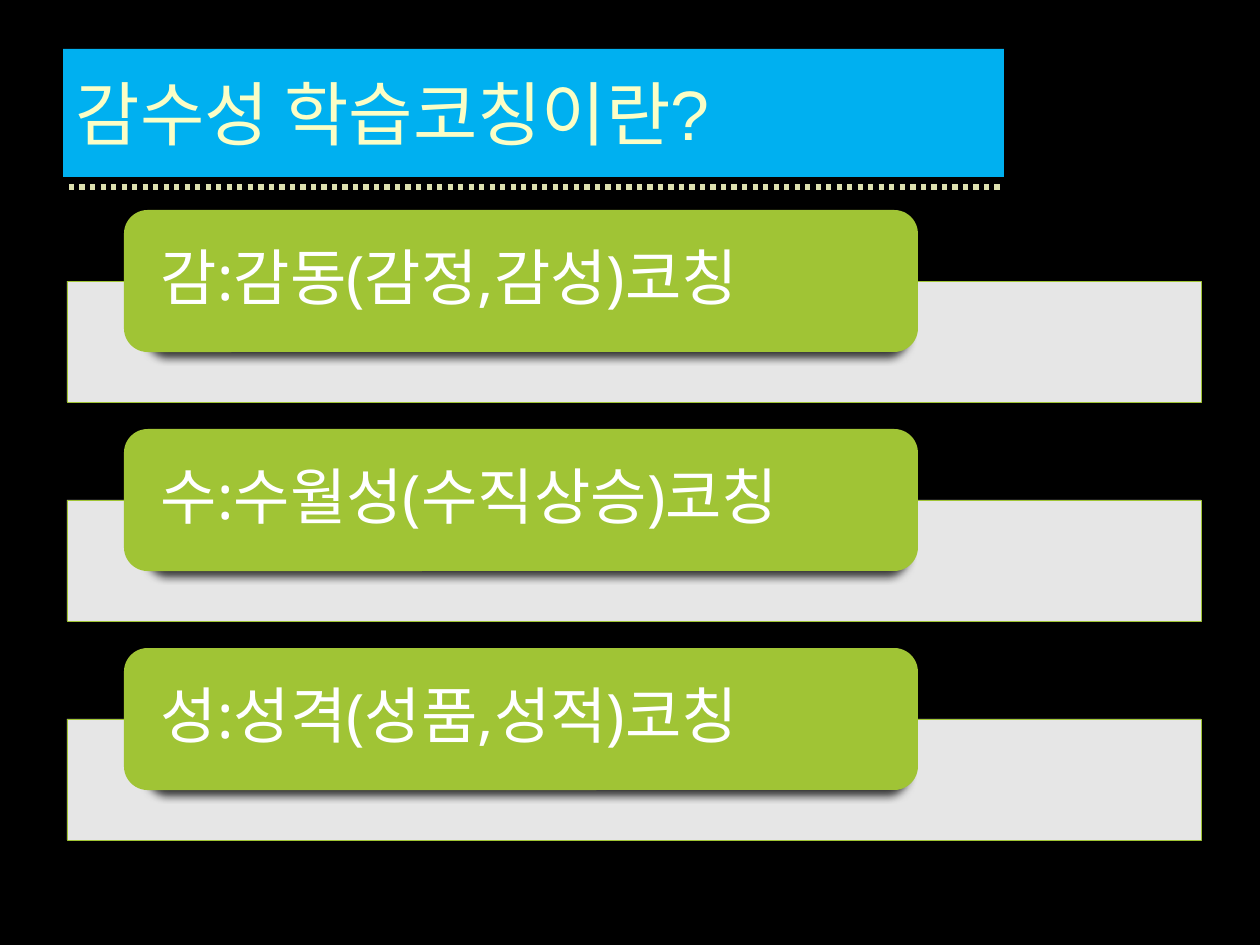
"""Builds a slide that explains sensitivity learning coaching in three rows."""
from dataclasses import dataclass

from lxml import etree
from pptx import Presentation, util as u
from pptx.dml.color import RGBColor
from pptx.enum import dml, shapes, text
from pptx.oxml import ns

TITLE = "감수성 학습코칭이란?"
ROWS = ["감:감동(감정,감성)코칭", "수:수월성(수직상승)코칭", "성:성격(성품,성적)코칭"]

SCALE = 914400 / 126
SLIDE_SIZE = (1260, 945)
TITLE_BOX = (63, 49, 941, 128)
RULE = (69, 187, 1004, 187)
BAR = (67, 281, 1134, 121)
LABEL = (124, 210, 794, 142)
ROW_PITCH = 219


@dataclass(frozen=True)
class Theme:
    background: str = "000000"
    title_fill: str = "00B0F0"
    title_text: str = "FBFEC6"
    rule: str = "DDE0AF"
    accent: str = "A0C435"
    white: str = "FFFFFF"
    shadow: str = "000000"
    title_font: str = "Arial"
    label_font: str = "Noto Sans"
    title_size: int = 40
    label_size: int = 35


THEME = Theme()


def px(value):
    return u.Emu(round(value * SCALE))


def child(parent, tag, **attributes):
    node = etree.SubElement(parent, ns.qn(tag))
    for name, value in attributes.items():
        node.set(name, str(value))
    return node


def add_box(page, kind, place, fill):
    box = page.shapes.add_shape(kind, *map(px, place))
    box.shadow.inherit = False
    box.fill.solid()
    box.fill.fore_color.rgb = RGBColor.from_string(fill)
    box.line.fill.background()
    return box


def write(box, words, font, size, color, inset):
    frame = box.text_frame
    frame.word_wrap = True
    frame.vertical_anchor = text.MSO_ANCHOR.MIDDLE
    frame.margin_left = frame.margin_right = px(inset)
    frame.margin_top = frame.margin_bottom = 0
    para = frame.paragraphs[0]
    para.alignment = text.PP_ALIGN.LEFT
    span = para.add_run()
    span.text = words
    span.font.name = font
    span.font.size = u.Pt(size)
    span.font.color.rgb = RGBColor.from_string(color)
    return para


def add_shadow(box):
    effects = box._element.spPr.find(ns.qn("a:effectLst"))
    shadow = child(effects, "a:outerShdw", blurRad=u.Pt(5), dist=u.Pt(4),
                   dir=40 * 60000, sx=96000, algn="ctr", rotWithShape=0)
    color = child(shadow, "a:srgbClr", val=THEME.shadow)
    child(color, "a:alpha", val=78000)


def add_rule(page):
    rule = page.shapes.add_connector(shapes.MSO_CONNECTOR.STRAIGHT, *map(px, RULE))
    rule.line.color.rgb = RGBColor.from_string(THEME.rule)
    rule.line.width = u.Pt(3)
    rule.line.dash_style = dml.MSO_LINE.ROUND_DOT
    child(rule._element.spPr, "a:effectLst")


def add_row(page, index, words):
    shift = index * ROW_PITCH
    left, top, width, height = BAR
    bar = add_box(page, shapes.MSO_SHAPE.RECTANGLE,
                  (left, top + shift, width, height), THEME.white)
    color = bar._element.spPr.find(ns.qn("a:solidFill"))[0]
    child(color, "a:alpha", val=90000)
    bar.line.color.rgb = RGBColor.from_string(THEME.accent)
    bar.line.width = u.Pt(0.25)

    left, top, width, height = LABEL
    label = add_box(page, shapes.MSO_SHAPE.ROUNDED_RECTANGLE,
                    (left, top + shift, width, height), THEME.accent)
    add_shadow(label)
    para = write(label, words, THEME.label_font, THEME.label_size, THEME.white, 30)
    para.line_spacing = 0.9


def main():
    deck = Presentation()
    deck.slide_width, deck.slide_height = map(px, SLIDE_SIZE)
    page = deck.slides.add_slide(deck.slide_layouts[6])
    page.background.fill.solid()
    page.background.fill.fore_color.rgb = RGBColor.from_string(THEME.background)

    add_rule(page)
    title = add_box(page, shapes.MSO_SHAPE.RECTANGLE, TITLE_BOX, THEME.title_fill)
    write(title, TITLE, THEME.title_font, THEME.title_size, THEME.title_text, 13)
    for index, words in enumerate(ROWS):
        add_row(page, index, words)
    deck.save("out.pptx")


if __name__ == "__main__":
    main()
